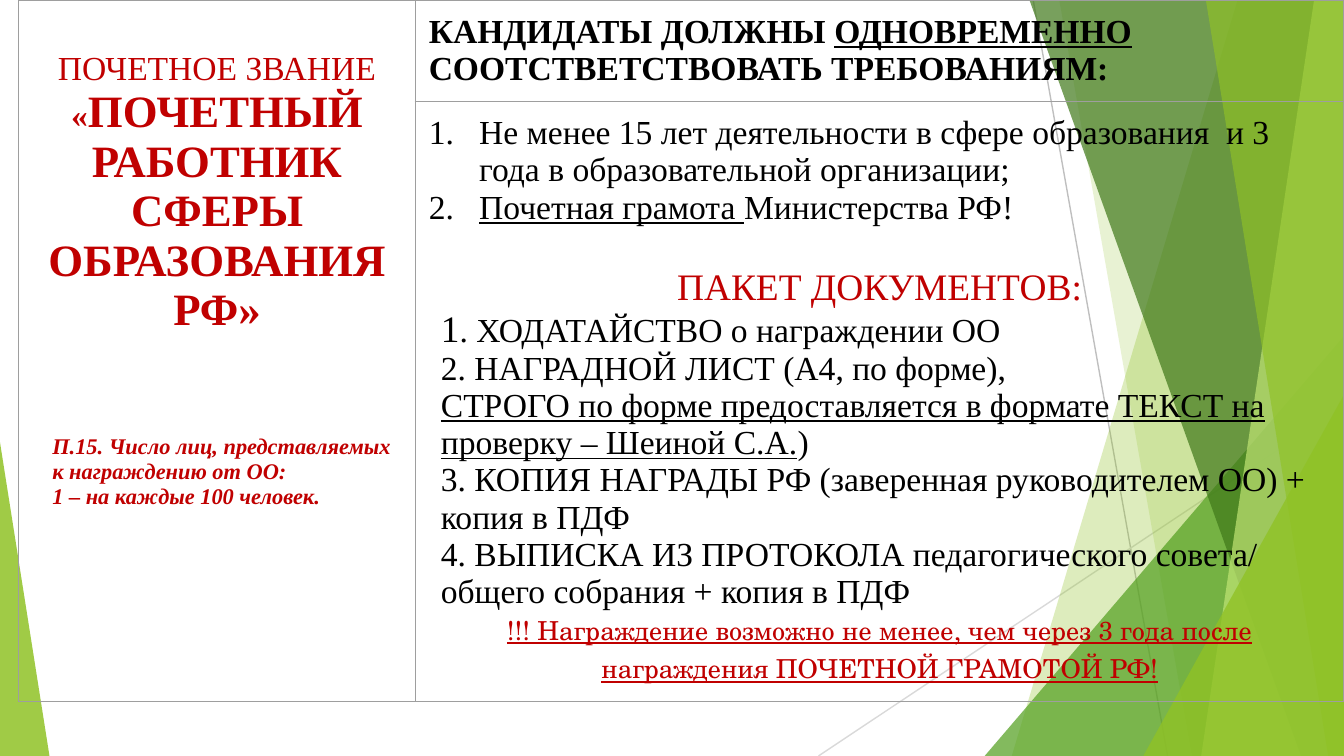
from lxml import etree
from pptx import Presentation
from pptx.dml.color import RGBColor
from pptx.enum.shapes import MSO_CONNECTOR, MSO_SHAPE
from pptx.enum.text import MSO_ANCHOR, PP_ALIGN
from pptx.oxml.ns import qn
from pptx.util import Pt

STRAIGHT = MSO_CONNECTOR.STRAIGHT
TRIANGLE = MSO_SHAPE.ISOSCELES_TRIANGLE
TOP = MSO_ANCHOR.TOP
LEFT, CENTER = PP_ALIGN.LEFT, PP_ALIGN.CENTER

WIDTH, HEIGHT = 720, 405
SERIF, SCHOOL = "Times New Roman", "TeX Gyre Schola"
COLORS = {
    "black": "000000", "red": "C00000", "lime": "90C226", "green": "54A021",
    "forest": "3F7819", "pale": "C0E474", "rule": "9E9E9E",
    "gray": "BFBFBF", "silver": "D9D9D9",
}

RAYS = [
    ((553.5, 0), (625.5, HEIGHT), "gray"),
    ((WIDTH, 217.5), (438.5, HEIGHT), "silver"),
]
# band: top x, bottom x; triangle: left, top, width, apex
FACETS = [
    ("band", (663, 542), "lime", 30),
    ("band", (567.5, 638.5), "lime", 20),
    ("triangle", (527.5, 180, 192.5, 1), "green", 72),
    ("band", (551.5, 697), "forest", 70),
    ("band", (704, 643.5), "pale", 70),
    ("band", (646, 711.5), "lime", 65),
    ("triangle", (612.5, 211.5, 107.5, 1), "lime", 80),
    ("triangle", (0, 237, 26.5, 0), "lime", 85),
]

# paragraph: alignment, indent, hanging number, space before, spans
# span: text, size, style letters, colour, font
AWARD = [
    (CENTER, 0, False, 0, [
        ("ПОЧЕТНОЕ ЗВАНИЕ ", 18, "", "red", SERIF),
        ("«", 18, "b", "red", SERIF),
        ("ПОЧЕТНЫЙ РАБОТНИК СФЕРЫ ОБРАЗОВАНИЯ РФ»", 24, "b", "red", SERIF)]),
    (LEFT, 10.8, False, 53, [
        ("П.15. Число лиц, представляемых к награждению от ОО:", 12, "bi", "red", SERIF)]),
    (LEFT, 10.8, False, 0, [
        ("1 – на каждые 100 человек.", 12, "bi", "red", SERIF)]),
]
HEADING = [
    (LEFT, 0, False, 0, [
        ("КАНДИДАТЫ ДОЛЖНЫ ", 18, "b", "black", SERIF),
        ("ОДНОВРЕМЕННО", 18, "bu", "black", SERIF),
        (" СООТСТВЕТСТВОВАТЬ ТРЕБОВАНИЯМ:", 18, "b", "black", SERIF)]),
]
REQUIREMENTS = [
    (LEFT, 27, True, 0, [
        ("Не менее 15 лет деятельности в сфере образования  и 3 года "
         "в образовательной организации;", 18, "", "black", SERIF)]),
    (LEFT, 27, True, 0, [
        ("Почетная грамота ", 18, "u", "black", SERIF),
        ("Министерства РФ!", 18, "", "black", SERIF)]),
    (CENTER, 0, False, 22, [("ПАКЕТ ДОКУМЕНТОВ:", 20, "", "red", SERIF)]),
    (LEFT, 6.5, False, 0, [
        ("1", 20, "", "black", SERIF),
        (". ХОДАТАЙСТВО о награждении ОО", 18, "", "black", SERIF)]),
    (LEFT, 6.5, False, 0, [
        ("2. НАГРАДНОЙ ЛИСТ (А4, по форме),", 18, "", "black", SERIF)]),
    (LEFT, 6.5, False, 0, [
        ("СТРОГО по форме предоставляется в формате ТЕКСТ на проверку – Шеиной С.А.",
         18, "u", "black", SERIF),
        (")", 18, "", "black", SERIF)]),
    (LEFT, 6.5, False, 0, [
        ("3. КОПИЯ НАГРАДЫ РФ (заверенная руководителем ОО) + копия в ПДФ",
         18, "", "black", SERIF)]),
    (LEFT, 6.5, False, 0, [
        ("4. ВЫПИСКА ИЗ ПРОТОКОЛА педагогического совета/ общего собрания + копия в ПДФ",
         18, "", "black", SERIF)]),
    (CENTER, 0, False, 0, [
        ("!!! Награждение возможно не менее, чем через 3 года после награждения "
         "ПОЧЕТНОЙ ГРАМОТОЙ РФ!", 14, "u", "red", SCHOOL)]),
]
COLUMNS, ROWS = [212.5, 497.5], [54, 321.5]
INSET = 7.2
CELLS = [(0, 0, AWARD, 27.2), (0, 1, HEADING, INSET), (1, 1, REQUIREMENTS, INSET)]


def rgb(name):
    """Return the named colour."""
    return RGBColor.from_string(COLORS[name])


def add_ray(slide, start, end, color):
    """Draw one thin background line."""
    ray = slide.shapes.add_connector(STRAIGHT, *[Pt(v) for v in start + end])
    ray.line.color.rgb = rgb(color)
    ray.line.width = Pt(0.75)
    etree.SubElement(ray._element.spPr, qn("a:effectLst"))


def add_facet(slide, kind, place, color, opacity):
    """Draw one translucent background facet."""
    if kind == "band":
        top, bottom = place
        builder = slide.shapes.build_freeform(Pt(top), 0)
        corners = [(WIDTH, 0), (WIDTH, HEIGHT), (bottom, HEIGHT)]
        builder.add_line_segments([(Pt(x), Pt(y)) for x, y in corners])
        facet = builder.convert_to_shape()
    else:
        left, top, width, apex = place
        facet = slide.shapes.add_shape(
            TRIANGLE, Pt(left), Pt(top), Pt(width), Pt(HEIGHT - top))
        facet.adjustments[0] = apex
    facet.shadow.inherit = False
    facet.line.fill.background()
    facet.fill.solid()
    facet.fill.fore_color.rgb = rgb(color)
    tint = facet._element.spPr.find(qn("a:solidFill"))[0]
    etree.SubElement(tint, qn("a:alpha"), val=str(opacity * 1000))


def write_cell(cell, paragraphs, margin_top):
    """Fill a table cell with formatted paragraphs."""
    cell.vertical_anchor = TOP
    cell.margin_left = cell.margin_right = cell.margin_bottom = Pt(INSET)
    cell.margin_top = Pt(margin_top)
    frame = cell.text_frame
    for index, (align, indent, numbered, before, spans) in enumerate(paragraphs):
        para = frame.add_paragraph() if index else frame.paragraphs[0]
        para.alignment = align
        para.space_before = Pt(before)
        properties = para._p.get_or_add_pPr()
        properties.set("marL", str(Pt(indent)))
        if numbered:
            properties.set("indent", str(-Pt(indent)))
            etree.SubElement(properties, qn("a:buAutoNum"), type="arabicPeriod")
        for text, size, style, color, font in spans:
            span = para.add_run()
            span.text = text
            span.font.size = Pt(size)
            span.font.name = font
            span.font.bold = "b" in style
            span.font.italic = "i" in style
            span.font.underline = "u" in style
            span.font.color.rgb = rgb(color)


def outline_cell(cell):
    """Clear the cell fill and draw its four borders."""
    cell.fill.background()
    properties = cell._tc.get_or_add_tcPr()
    for position, side in enumerate(("lnL", "lnR", "lnT", "lnB")):
        border = etree.Element(qn("a:" + side), w=str(Pt(0.75)))
        fill = etree.SubElement(border, qn("a:solidFill"))
        etree.SubElement(fill, qn("a:srgbClr"), val=COLORS["rule"])
        properties.insert(position, border)


def add_award_table(slide):
    """Build the table with the award and its requirements."""
    table = slide.shapes.add_table(
        len(ROWS), len(COLUMNS), Pt(10), 0, Pt(sum(COLUMNS)), Pt(sum(ROWS))).table
    table.first_row = table.horz_banding = False
    for column, width in zip(table.columns, COLUMNS):
        column.width = Pt(width)
    for row, height in zip(table.rows, ROWS):
        row.height = Pt(height)
    for cell in table.iter_cells():
        outline_cell(cell)
    table.cell(0, 0).merge(table.cell(1, 0))
    for row, column, paragraphs, margin_top in CELLS:
        write_cell(table.cell(row, column), paragraphs, margin_top)


def main():
    """Build the slide and save the deck."""
    deck = Presentation()
    deck.slide_width, deck.slide_height = Pt(WIDTH), Pt(HEIGHT)
    slide = deck.slides.add_slide(deck.slide_layouts[6])
    for ray in RAYS:
        add_ray(slide, *ray)
    for facet in FACETS:
        add_facet(slide, *facet)
    add_award_table(slide)
    deck.save("out.pptx")


if __name__ == "__main__":
    main()
